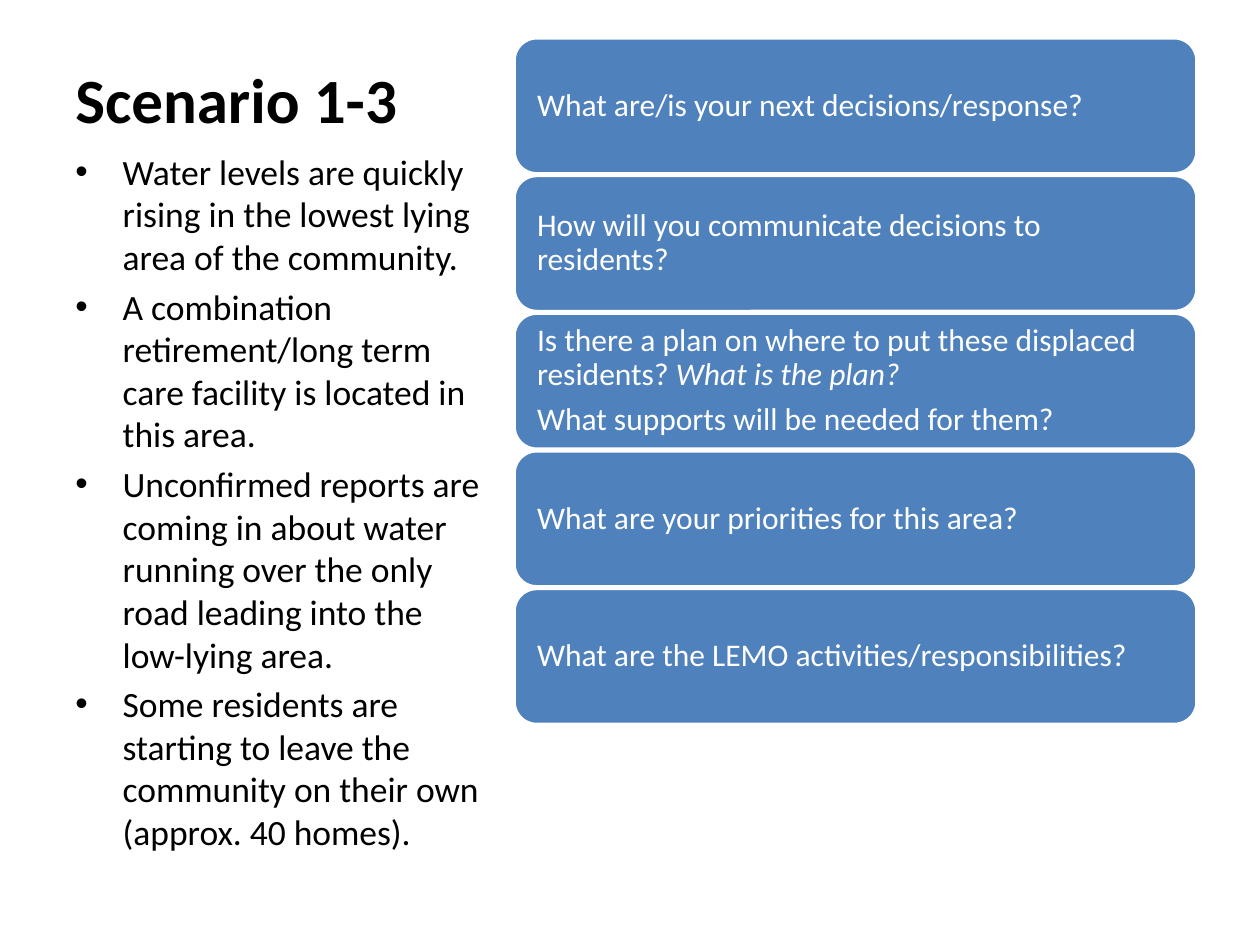
import pptx
import pptx.util
from lxml import etree
from pptx.dml.color import RGBColor
from pptx.enum.shapes import MSO_SHAPE
from pptx.enum.text import MSO_ANCHOR, PP_ALIGN
from pptx.oxml.ns import qn

Inches, Pt = pptx.util.Inches, pptx.util.Pt

FONT = "Calibri"
BLACK = RGBColor(0x00, 0x00, 0x00)
WHITE = RGBColor(0xFF, 0xFF, 0xFF)
BLUE = RGBColor(0x4F, 0x81, 0xBD)

LEFT, TOP = 0.5, 0.3
CARD_LEFT, CARD_W, CARD_H, CARD_PITCH = 4.08, 5.42, 1.08, 1.0925
CARD_INSET = 0.13
BULLET_INDENT = 0.375

BULLETS = [
    "Water levels are quickly rising in the lowest lying area of the community.",
    "A combination retirement/long term care facility is located in this area.",
    "Unconfirmed reports are coming in about water running over the only road "
    "leading into the low-lying area.",
    "Some residents are starting to leave the community on their own "
    "(approx. 40 homes).",
]
# Each card is a list of paragraphs; each paragraph is (plain text, italic text).
CARDS = [
    [("What are/is your next decisions/response?", "")],
    [("How will you communicate decisions to residents?", "")],
    [("Is there a plan on where to put these displaced residents? ", "What is the plan?"),
     ("What supports will be needed for them?", "")],
    [("What are your priorities for this area?", "")],
    [("What are the LEMO activities/responsibilities?", "")],
]


def set_font(font, size, color, bold=False):
    font.name, font.size, font.bold = FONT, Pt(size), bold
    font.color.rgb = color


def add_box(s, left, top, width, height):
    box = s.shapes.add_textbox(Inches(left), Inches(top), Inches(width), Inches(height))
    box.text_frame.word_wrap = True
    return box.text_frame


def add_title(s, text):
    tf = add_box(s, LEFT, TOP, 3.29, 1.27)
    tf.vertical_anchor = MSO_ANCHOR.BOTTOM
    tf.margin_bottom = Inches(0.49)
    tf.text = text
    set_font(tf.paragraphs[0].runs[0].font, 36, BLACK, bold=True)


def add_bullet(p):
    pPr = p._p.get_or_add_pPr()
    pPr.set("marL", str(Inches(BULLET_INDENT)))
    pPr.set("indent", str(-Inches(BULLET_INDENT)))
    etree.SubElement(pPr, qn("a:buFont")).set("typeface", "Arial")
    etree.SubElement(pPr, qn("a:buChar")).set("char", "•")


def add_bullet_list(s, items):
    tf = add_box(s, LEFT, 1.14, 3.42, 4.77)
    for i, item in enumerate(items):
        p = tf.add_paragraph() if i else tf.paragraphs[0]
        p.text = item
        add_bullet(p)
        if i:
            p.space_before = Pt(4)
        set_font(p.runs[0].font, 20.3, BLACK)


def add_card(s, row, paragraphs):
    sp = s.shapes.add_shape(
        MSO_SHAPE.ROUNDED_RECTANGLE, Inches(CARD_LEFT), Inches(TOP + row * CARD_PITCH),
        Inches(CARD_W), Inches(CARD_H))
    sp.shadow.inherit = False
    sp.fill.solid()
    sp.fill.fore_color.rgb = BLUE
    sp.line.color.rgb = WHITE
    sp.line.width = Pt(2)
    tf = sp.text_frame
    tf.word_wrap = True
    tf.vertical_anchor = MSO_ANCHOR.MIDDLE
    tf.margin_left = tf.margin_right = Inches(CARD_INSET)
    tf.margin_top = tf.margin_bottom = Inches(CARD_INSET)
    for i, (plain, italic) in enumerate(paragraphs):
        p = tf.add_paragraph() if i else tf.paragraphs[0]
        p.text = plain
        p.alignment = PP_ALIGN.LEFT
        p.line_spacing = 0.9
        p.space_after = Pt(6.3)
        if italic:
            r = p.add_run()
            r.text = italic
            r.font.italic = True
        for r in p.runs:
            set_font(r.font, 18, WHITE)


def main():
    prs = pptx.Presentation()
    prs.slide_width, prs.slide_height = Inches(10), Inches(7.5)
    s = prs.slides.add_slide(prs.slide_layouts[6])
    add_title(s, "Scenario 1-3")
    add_bullet_list(s, BULLETS)
    for row, paragraphs in enumerate(CARDS):
        add_card(s, row, paragraphs)
    prs.save("out.pptx")


if __name__ == "__main__":
    main()
